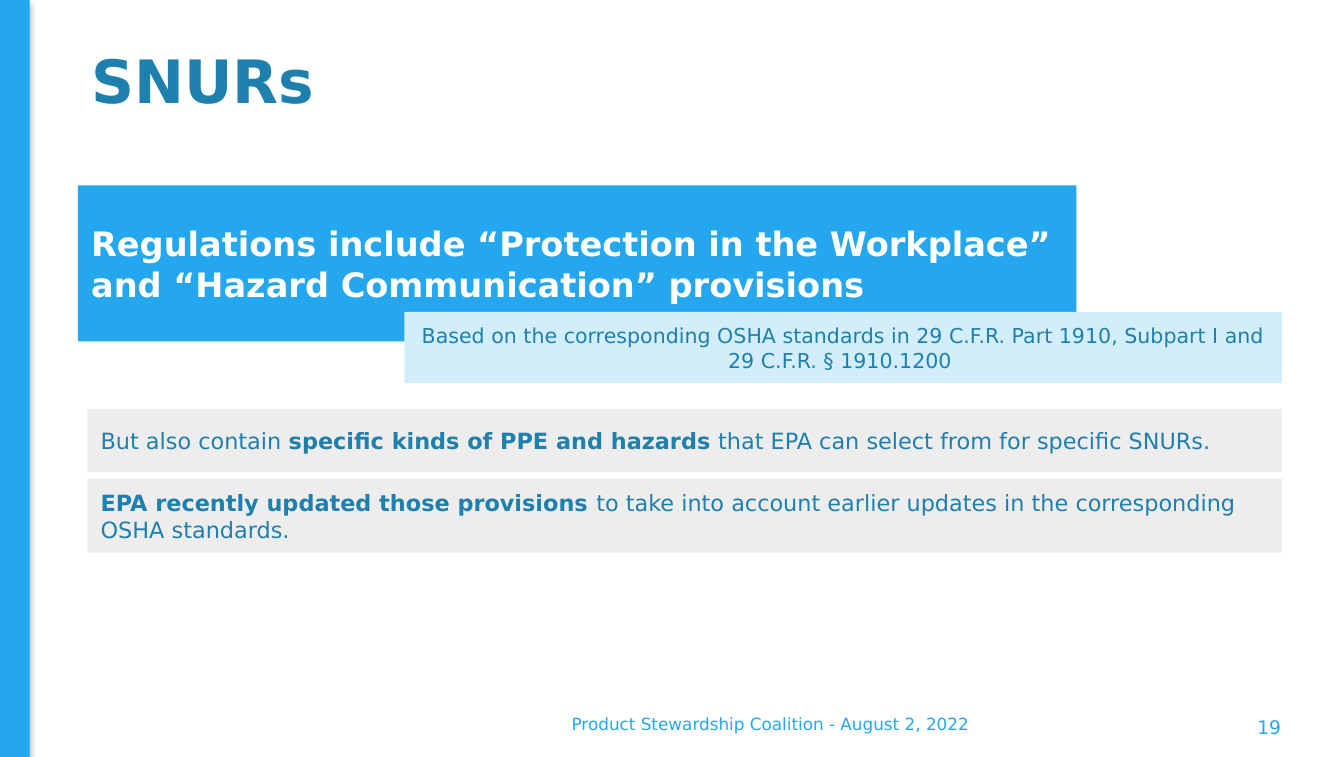
"""Build the SNURs slide with its sidebar, title, banner, notes and footer."""
from dataclasses import dataclass
from typing import Any, Optional

import lxml.etree
import pptx
import pptx.dml.color
import pptx.enum.shapes
import pptx.enum.text
import pptx.oxml.ns
import pptx.util

ALIGN = pptx.enum.text.PP_ALIGN
qn = pptx.oxml.ns.qn


@dataclass(frozen=True)
class Theme:
    font: str = "DejaVu Sans"
    blue: str = "24A7EF"
    deep: str = "1F80AE"
    pale: str = "D2EEFB"
    gray: str = "DCDDDF"
    white: str = "FFFFFF"
    black: str = "000000"
    title: int = 32
    lead: int = 18
    body: int = 12
    note: int = 11
    page: int = 10
    foot: int = 9


@dataclass(frozen=True)
class Run:
    text: str
    bold: bool = False


@dataclass(frozen=True)
class Box:
    """Place a block by left, top, width and height in percent of the slide."""
    place: tuple[float, float, float, float]
    runs: tuple[Run, ...] = ()
    size: int = 12
    ink: str = "000000"
    fill: Optional[str] = None
    alpha: int = 100
    align: Any = ALIGN.LEFT
    space: float = 1.0


def tint(code: str) -> pptx.dml.color.RGBColor:
    return pptx.dml.color.RGBColor.from_string(code)


def apply(target: Any, values: dict[str, Any]) -> None:
    for name, value in values.items():
        setattr(target, name, value)


def add_node(parent: Any, tag: str, **attrs: Any) -> Any:
    return lxml.etree.SubElement(
        parent, qn(tag), {key: str(value) for key, value in attrs.items()})


def write(shape: Any, box: Box, theme: Theme) -> None:
    frame = shape.text_frame
    apply(frame, {"word_wrap": True,
                  "vertical_anchor": pptx.enum.text.MSO_ANCHOR.MIDDLE})
    line = frame.paragraphs[0]
    apply(line, {"alignment": box.align, "line_spacing": box.space})
    for part in box.runs:
        run = line.add_run()
        run.text = part.text
        apply(run.font, {"name": theme.font, "bold": part.bold,
                         "size": pptx.util.Pt(box.size)})
        run.font.color.rgb = tint(box.ink)


def draw(slide: Any, box: Box, wide: int, high: int, theme: Theme) -> Any:
    spans = (wide, high, wide, high)
    place = [round(part * span / 100) for part, span in zip(box.place, spans)]
    if box.fill is None:
        shape = slide.shapes.add_textbox(*place)
    else:
        shape = slide.shapes.add_shape(
            pptx.enum.shapes.MSO_SHAPE.RECTANGLE, *place)
        shape.shadow.inherit = False
        shape.line.fill.background()
        shape.fill.solid()
        shape.fill.fore_color.rgb = tint(box.fill)
        if box.alpha < 100:
            color = shape._element.spPr.find(f".//{qn('a:srgbClr')}")
            add_node(color, "a:alpha", val=box.alpha * 1000)
    if box.runs:
        write(shape, box, theme)
    return shape


def shade(shape: Any, theme: Theme) -> None:
    list_ = shape._element.spPr.find(qn("a:effectLst"))
    cast = add_node(list_, "a:outerShdw", blurRad=pptx.util.Pt(3.1),
                    dist=pptx.util.Pt(1.8), dir=90 * 60000, rotWithShape=0)
    color = add_node(cast, "a:srgbClr", val=theme.black)
    add_node(color, "a:alpha", val=35000)


def main() -> None:
    theme = Theme()
    deck = pptx.Presentation()
    apply(deck, {"slide_width": pptx.util.Inches(10),
                 "slide_height": pptx.util.Inches(5.63)})
    slide = deck.slides.add_slide(deck.slide_layouts[6])
    wide, high = deck.slide_width, deck.slide_height

    bar = Box((0, 0, 2.2, 100), fill=theme.blue)
    shade(draw(slide, bar, wide, high, theme), theme)

    boxes = [
        Box((5.8, 3.55, 89.6, 15.1), (Run("SNURs", True),),
            theme.title, theme.deep, space=0.9),
        Box((23.2, 92.9, 68.2, 5.33),
            (Run("Product Stewardship Coalition - August 2, 2022"),),
            theme.foot, theme.blue, align=ALIGN.CENTER),
        Box((86.2, 94.32, 10.1, 3.55), (Run("19"),),
            theme.page, theme.blue, align=ALIGN.RIGHT),
        Box((5.8, 24.51, 74.3, 20.6),
            (Run("Regulations include “Protection in the Workplace” and "
                 "“Hazard Communication” provisions", True),),
            theme.lead, theme.white, theme.blue),
        Box((30.1, 41.21, 65.3, 9.41),
            (Run("Based on the corresponding OSHA standards in 29 C.F.R. "
                 "Part 1910, Subpart I and 29 C.F.R. § 1910.1200 "),),
            theme.note, theme.deep, theme.pale, align=ALIGN.CENTER),
    ]
    notes = [
        (54, 8.35, (Run("But also contain "),
                    Run("specific kinds of PPE and hazards", True),
                    Run(" that EPA can select from for specific SNURs."))),
        (63.23, 9.77, (Run("EPA recently updated those provisions ", True),
                       Run("to take into account earlier updates in the "
                           "corresponding OSHA standards."))),
    ]
    boxes += [Box((6.5, top, 88.9, tall), runs, theme.body, theme.deep,
                  theme.gray, alpha=50) for top, tall, runs in notes]
    for box in boxes:
        draw(slide, box, wide, high, theme)
    deck.save("out.pptx")


if __name__ == "__main__":
    main()
